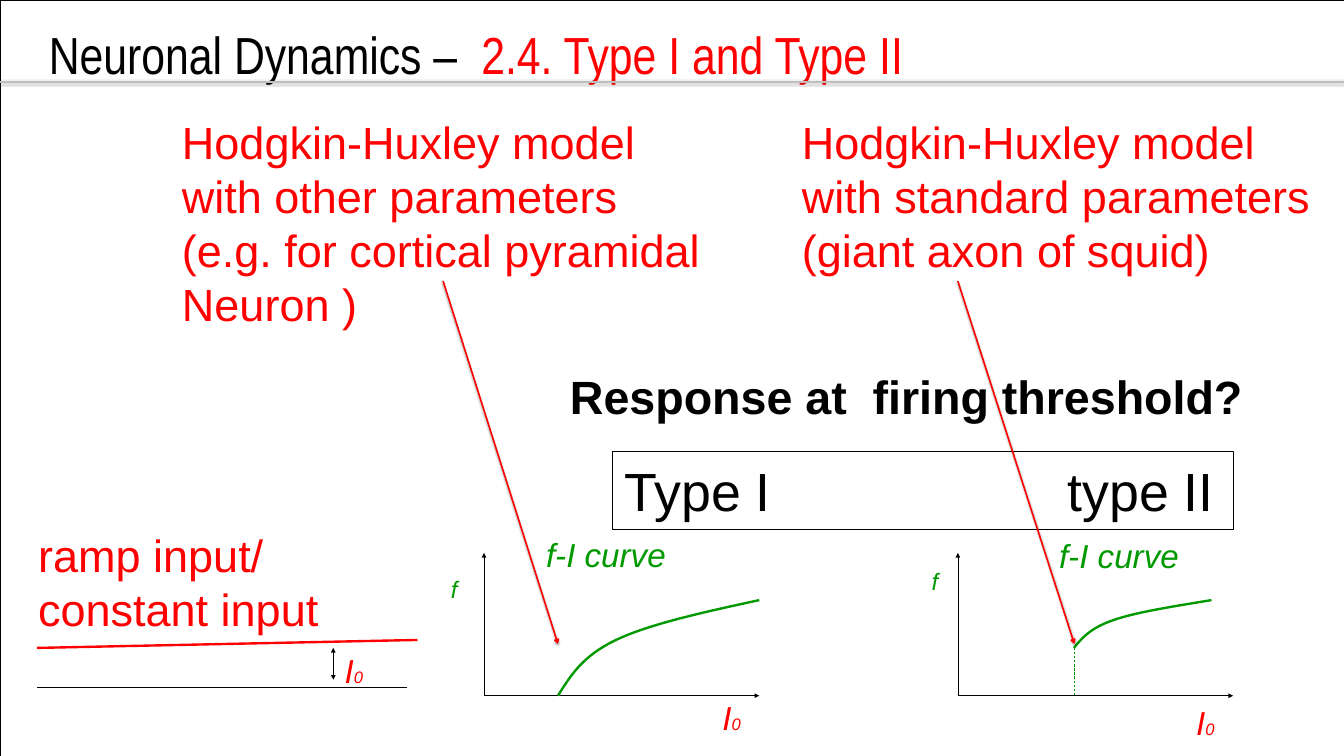
from lxml import etree
from pptx import Presentation
from pptx.dml.color import RGBColor
from pptx.enum.dml import MSO_LINE
from pptx.enum.shapes import MSO_CONNECTOR, MSO_SHAPE
from pptx.oxml.ns import qn
from pptx.util import Pt

BLACK = RGBColor(0, 0, 0)
RED = RGBColor(255, 0, 0)
GREEN = RGBColor(0, 153, 0)
GREY = RGBColor(191, 191, 191)
STRAIGHT = MSO_CONNECTOR.STRAIGHT
RECTANGLE = MSO_SHAPE.RECTANGLE
DASH = MSO_LINE.DASH

WIDTH, HEIGHT = 1701.36, 956.88
NARROW_INSETS = (7.2, 3.6)
WIDE_INSETS = (15.12, 7.92)
CURVE_STEPS = 16

TITLE = [("Neuronal Dynamics – ", {}), (" 2.4. Type I and Type II", {"color": RED})]
CURRENT = [("I", {}), ("0", {"size": 21})]
MODELS = [
    (["Hodgkin-Huxley model", "with other parameters",
      "(e.g. for cortical pyramidal", "Neuron )"],
     (223.2, 141.8, 677.5, 283.7), (560.9, 355.7), (706.3, 815)),
    (["Hodgkin-Huxley model", "with standard parameters", "(giant axon of squid)"],
     (1008, 141.8, 664.6, 214.6), (1212.5, 355.7), (1360, 815)),
]
GRAPHS = [
    {"origin": (612.7, 880.6), "rate": (555.8, 720), "current": (899.3, 874.8),
     "caption": (676.1, 668.9), "threshold": None,
     "curve": [(706.3, 880.6), (722.2, 855.4), (737.3, 830.2), (779.8, 810),
               (822.2, 789.8), (891.4, 774.7), (961.2, 759.6)]},
    {"origin": (1212.5, 880.6), "rate": (1164.2, 709.9), "current": (1499, 880.6),
     "caption": (1325.5, 669.6), "threshold": 1360,
     "curve": [(1359.4, 820.1), (1370.2, 807.1), (1380.2, 794.9), (1409.8, 784.8),
               (1438.6, 774.7), (1486.1, 767.5), (1533.6, 759.6)]},
]
AXIS_LENGTH, AXIS_HEIGHT = 348.5, 180.8

deck = Presentation()
deck.slide_width, deck.slide_height = Pt(WIDTH), Pt(HEIGHT)
page = deck.slides.add_slide(deck.slide_layouts[6])


def write(box, lines, size, color=BLACK, font="Arial", bold=False, italic=False,
          insets=WIDE_INSETS, wrap=False, after=0):
    frame = box.text_frame
    frame.word_wrap = wrap
    frame.margin_left = frame.margin_right = Pt(insets[0])
    frame.margin_top = frame.margin_bottom = Pt(insets[1])
    for index, line in enumerate(lines):
        para = frame.add_paragraph() if index else frame.paragraphs[0]
        para.space_after = Pt(after)
        for words, change in [(line, {})] if isinstance(line, str) else line:
            span = para.add_run()
            span.text = words
            span.font.name = font
            span.font.size = Pt(change.get("size", size))
            span.font.bold, span.font.italic = bold, italic
            span.font.color.rgb = change.get("color", color)


def add_text(lines, place, **style):
    box = page.shapes.add_textbox(*map(Pt, place))
    write(box, lines, **style)
    return box


def add_frame(place):
    frame = page.shapes.add_shape(RECTANGLE, *map(Pt, place))
    frame.shadow.inherit = False
    frame.fill.background()
    frame.line.color.rgb = BLACK
    frame.line.width = Pt(0.75)
    return frame


def add_line(start, end, color=BLACK, width=0.75, head=None, tail=None,
             dashed=False, shadow=False):
    line = page.shapes.add_connector(STRAIGHT, *map(Pt, start + end))
    line.line.color.rgb = color
    line.line.width = Pt(width)
    if dashed:
        line.line.dash_style = DASH
    outline = line.line._get_or_add_ln()
    for tag, kind in (("a:headEnd", head), ("a:tailEnd", tail)):
        if kind:
            etree.SubElement(outline, qn(tag), type=kind)
    effects = etree.SubElement(line._element.spPr, qn("a:effectLst"))
    if shadow:
        cast = etree.SubElement(effects, qn("a:outerShdw"), blurRad=str(Pt(3.1)),
                                dist=str(Pt(1.6)), dir="5400000", rotWithShape="0")
        shade = etree.SubElement(cast, qn("a:srgbClr"), val=str(BLACK))
        etree.SubElement(shade, qn("a:alpha"), val="38000")


def bezier(start, first, second, end):
    for step in range(1, CURVE_STEPS + 1):
        t = step / CURVE_STEPS
        u = 1 - t
        yield tuple(Pt(u**3 * a + 3 * u * u * t * b + 3 * u * t * t * c + t**3 * d)
                    for a, b, c, d in zip(start, first, second, end))


def add_curve(points):
    builder = page.shapes.build_freeform(*map(Pt, points[0]), scale=1.0)
    for index in range(0, len(points) - 1, 3):
        builder.add_line_segments(list(bezier(*points[index:index + 4])), close=False)
    curve = builder.convert_to_shape()
    curve.shadow.inherit = False
    curve.fill.background()
    curve.line.color.rgb = GREEN
    curve.line.width = Pt(3)


def add_current(left, top):
    add_text([CURRENT], (left, top, 54, 66.2), size=42, color=RED, italic=True)


def add_graph(graph):
    left, base = graph["origin"]
    add_line((left, base), (left, base - AXIS_HEIGHT), tail="triangle")
    add_line((left, base), (left + AXIS_LENGTH, base), tail="triangle")
    add_current(*graph["current"])
    add_text(["f"], graph["rate"] + (38.9, 51.8), size=30, color=GREEN, italic=True)
    add_curve(graph["curve"])
    if graph["threshold"]:
        add_line((graph["threshold"], 820.1), (graph["threshold"], base),
                 color=GREEN, dashed=True)
    add_text(["f-I curve"], graph["caption"] + (183.6, 66.2),
             size=42, color=GREEN, italic=True)


add_frame((0, 0, WIDTH, HEIGHT))
add_text(["Response at  firing threshold?"], (706.3, 457.2, 891.4, 87.1),
         size=59, bold=True)

add_text(["ramp input/", "constant input"], (33.1, 659.5, 389.5, 153.4),
         size=57, color=RED)
add_line((46.8, 870.5), (515.5, 870.5))
add_line((46.8, 820.1), (528.5, 810), color=RED, width=3)
add_current(421.2, 815)
add_line((421.9, 820.1), (421.9, 860.4), head="triangle", tail="triangle")

types = add_frame((775.4, 571.7, 786.2, 97.9))
write(types, ["Type I\ttype II"], size=68, wrap=True)
settings = types.text_frame.paragraphs[0]._p.get_or_add_pPr()
settings.set("algn", "l")
stops = etree.SubElement(settings, qn("a:tabLst"))
etree.SubElement(stops, qn("a:tab"), pos=str(Pt(561)), algn="l")

for graph in GRAPHS:
    add_graph(graph)

add_text([TITLE], (54.7, 25.2, 1642.3, 115.9), size=66, font="Arial Narrow",
         insets=NARROW_INSETS, wrap=True, after=28.4)
add_line((0, 103.7), (WIDTH, 103.7), color=GREY, width=2, shadow=True)

for lines, place, start, end in MODELS:
    add_line(start, end, color=RED, width=2, tail="arrow", shadow=True)
    add_text(lines, place, size=57, color=RED, insets=NARROW_INSETS)

deck.save("out.pptx")
